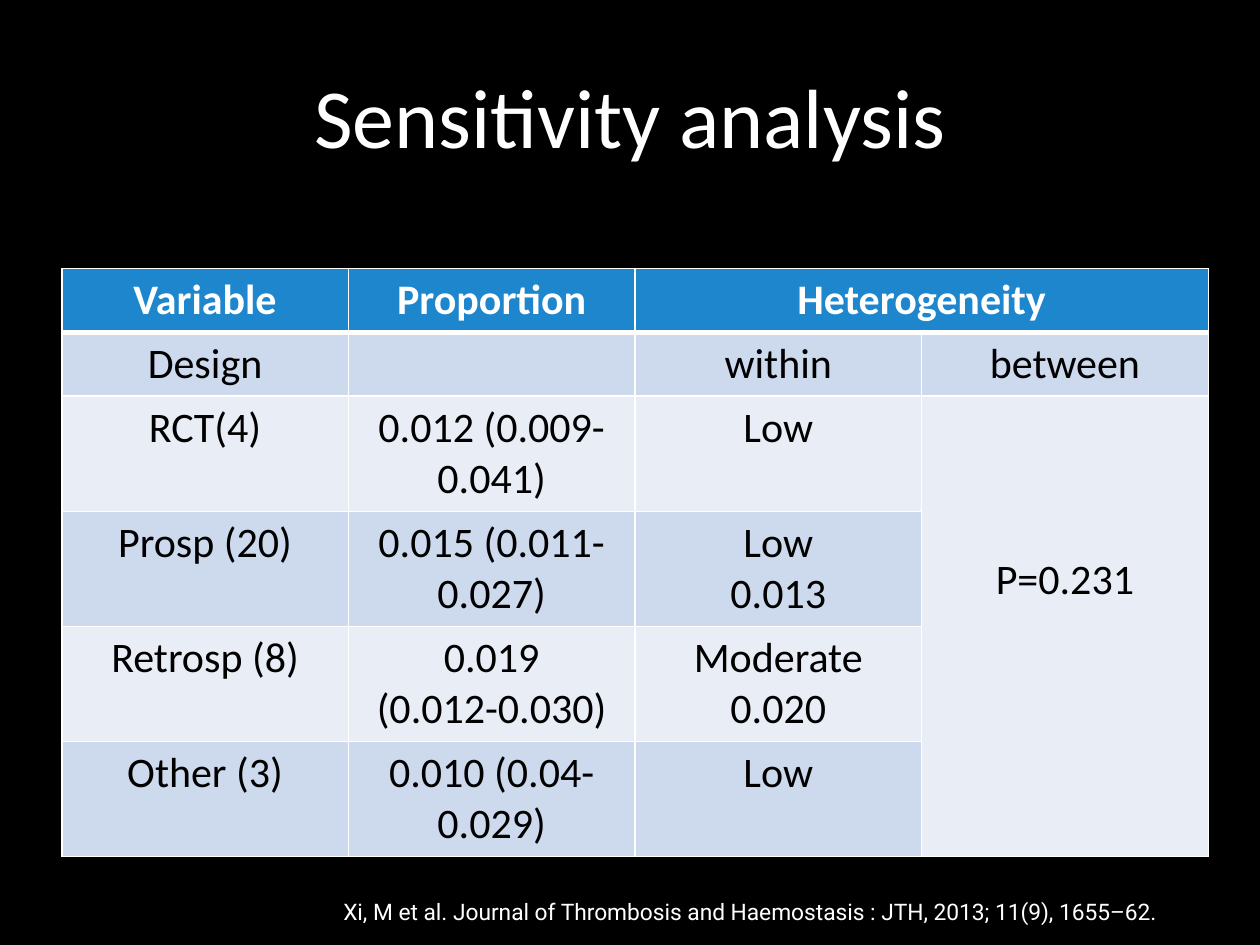
from dataclasses import dataclass

from lxml.etree import SubElement
from pptx import Presentation
from pptx.dml.color import RGBColor
from pptx.enum.text import MSO_ANCHOR, PP_ALIGN
from pptx.oxml.ns import qn
from pptx.util import Inches, Pt


@dataclass(frozen=True)
class Theme:
    background: str = "000000"
    light: str = "FFFFFF"
    dark: str = "000000"
    header: str = "1D86CD"
    bands: tuple = ("CDD9ED", "E8EDF6")
    font: str = "Calibri"
    citation_font: str = "Roboto"
    title_size: int = 48
    table_size: int = 24
    citation_size: int = 13
    border: int = 1
    header_border: int = 3


THEME = Theme()
TABLE_BOX = (0.49, 2.13, 9.1, 4.6)
ROW_HEIGHTS = (0.5, 0.5, 0.9, 0.9, 0.9, 0.9)
BETWEEN_TOP_MARGIN = 1.26
ROWS = (
    ("Variable", "Proportion", "Heterogeneity", ""),
    ("Design", "", "within", "between"),
    ("RCT(4)", "0.012 (0.009-0.041)", "Low", "P=0.231"),
    ("Prosp (20)", "0.015 (0.011-0.027)", "Low\n0.013", ""),
    ("Retrosp (8)", "0.019\n(0.012-0.030)", "Moderate\n0.020", ""),
    ("Other (3)", "0.010 (0.04-0.029)", "Low", ""),
)


def apply_format(target, values):
    for name, value in values.items():
        setattr(target, name, value)


def place(shape, box):
    names = ("left", "top", "width", "height")
    apply_format(shape, dict(zip(names, map(Inches, box))))


def write_text(frame, text, size, color, font=THEME.font, bold=False):
    frame.text = text
    for paragraph in frame.paragraphs:
        paragraph.alignment = PP_ALIGN.CENTER
        apply_format(paragraph.font, {"size": Pt(size), "name": font, "bold": bold})
        paragraph.font.color.rgb = RGBColor.from_string(color)
        for run in paragraph.runs:
            apply_format(run.font, {"size": Pt(size), "name": font, "bold": bold})
            run.font.color.rgb = RGBColor.from_string(color)


def fill_solid(fill, color):
    fill.solid()
    fill.fore_color.rgb = RGBColor.from_string(color)


def add_borders(cell, top, bottom):
    properties = cell._tc.get_or_add_tcPr()
    widths = {"lnL": THEME.border, "lnR": THEME.border, "lnT": top, "lnB": bottom}
    for index, (side, width) in enumerate(widths.items()):
        line = SubElement(properties, qn(f"a:{side}"), w=str(Pt(width)))
        color_fill = SubElement(line, qn("a:solidFill"))
        SubElement(color_fill, qn("a:srgbClr"), val=THEME.light)
        properties.insert(index, line)


def format_cell(cell, text, row):
    is_header = row == 0
    write_text(
        cell.text_frame,
        text,
        THEME.table_size,
        THEME.light if is_header else THEME.dark,
        bold=is_header,
    )
    fill_solid(cell.fill, THEME.header if is_header else THEME.bands[(row - 1) % 2])
    add_borders(
        cell,
        top=THEME.header_border if row == 1 else THEME.border,
        bottom=THEME.header_border if is_header else THEME.border,
    )


def add_title(slide, text):
    title = slide.shapes.title
    place(title, (0.75, 0.13, 8.5, 1.56))
    title.text_frame.vertical_anchor = MSO_ANCHOR.MIDDLE
    write_text(title.text_frame, text, THEME.title_size, THEME.light)


def add_results_table(slide):
    column_count = len(ROWS[0])
    frame = slide.shapes.add_table(len(ROWS), column_count, *map(Inches, TABLE_BOX))
    table = frame.table
    for column in table.columns:
        column.width = Inches(TABLE_BOX[2] / column_count)
    for row, height in zip(table.rows, ROW_HEIGHTS):
        row.height = Inches(height)
    for row, texts in enumerate(ROWS):
        for column, text in enumerate(texts):
            format_cell(table.cell(row, column), text, row)
    table.cell(0, 2).merge(table.cell(0, 3))
    between = table.cell(2, 3)
    between.merge(table.cell(len(ROWS) - 1, 3))
    between.margin_top = Inches(BETWEEN_TOP_MARGIN)


def add_citation(slide, text):
    box = slide.shapes.add_textbox(*map(Inches, (2.68, 7.12, 6.54, 0.22)))
    apply_format(box.text_frame, {
        "margin_left": 0,
        "margin_top": 0,
        "margin_right": 0,
        "margin_bottom": 0,
        "word_wrap": False,
        "vertical_anchor": MSO_ANCHOR.MIDDLE,
    })
    write_text(
        box.text_frame, text, THEME.citation_size, THEME.light, THEME.citation_font
    )


def main():
    presentation = Presentation()
    apply_format(presentation, {"slide_width": Inches(10), "slide_height": Inches(7.5)})
    slide = presentation.slides.add_slide(presentation.slide_layouts[5])
    fill_solid(slide.background.fill, THEME.background)
    add_title(slide, "Sensitivity analysis")
    add_results_table(slide)
    add_citation(
        slide,
        "Xi, M et al. Journal of Thrombosis and Haemostasis : JTH, 2013; 11(9), 1655–62.",
    )
    presentation.save("out.pptx")


if __name__ == "__main__":
    main()
